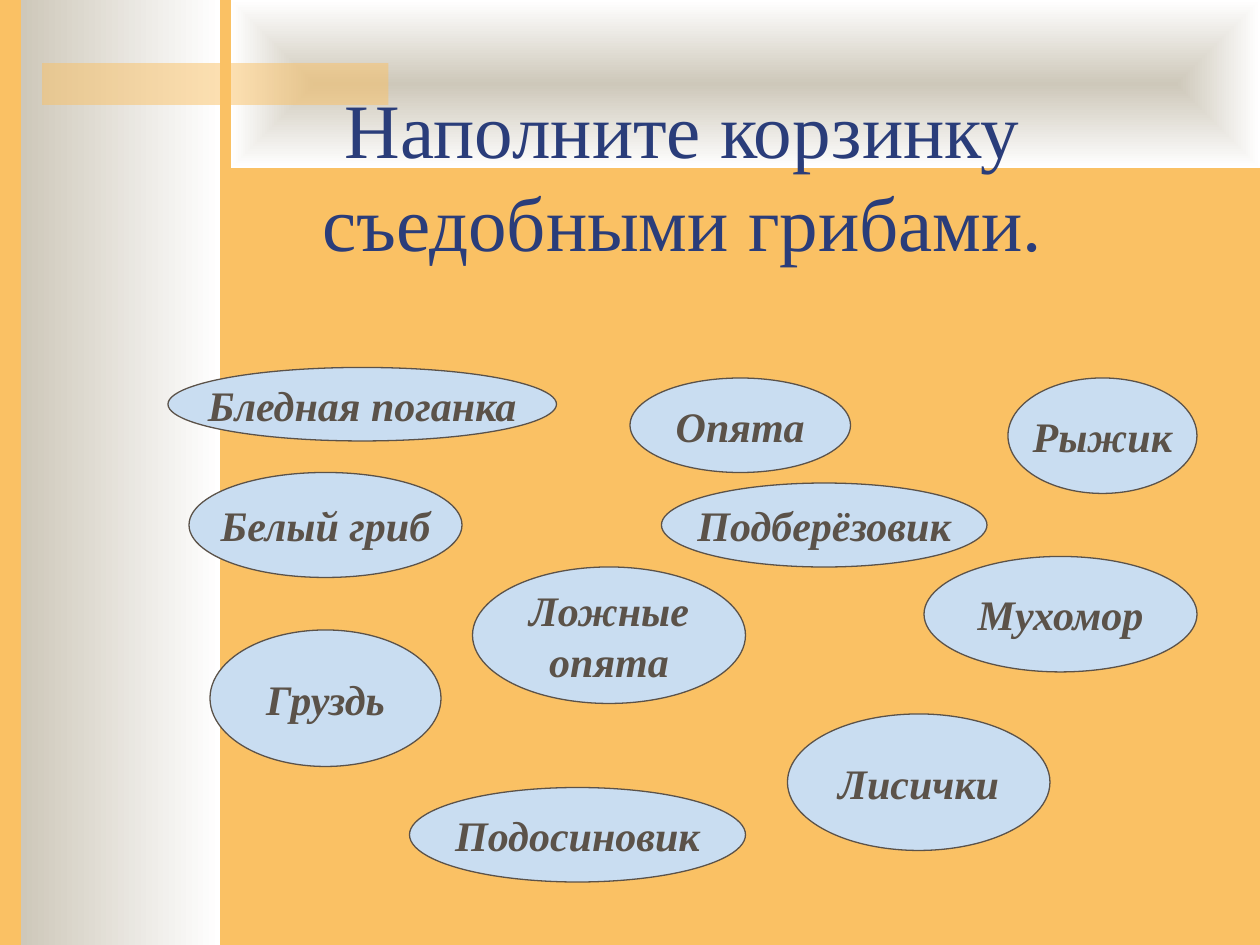
"""Build a slide that asks to pick the edible mushrooms."""
from pptx import Presentation
from pptx.dml.color import RGBColor
from pptx.enum.shapes import MSO_SHAPE
from pptx.enum.text import MSO_ANCHOR, MSO_AUTO_SIZE, PP_ALIGN
from pptx.oxml import parse_xml
from pptx.oxml.ns import nsdecls, qn
from pptx.util import Inches, Pt

ORANGE, STONE, WHITE = "FAC164", "CEC8BA", "FFFFFF"
NAVY, SKY, BROWN = "2A3D7A", "C9DDF1", "5B5249"
COLS, ROWS = 120, 90
TITLE = {"name": "Times New Roman", "size": Pt(44)}
LABEL = {"name": "Times New Roman", "size": Pt(24), "bold": True, "italic": True}
MUSHROOMS = [
    ("Бледная поганка", 16, 35, 37, 7),
    ("Опята", 60, 36, 21, 9),
    ("Белый гриб", 18, 45, 26, 10),
    ("Рыжик", 96, 36, 18, 11),
    ("Груздь", 20, 60, 22, 13),
    ("Ложные\nопята", 45, 54, 26, 13),
    ("Мухомор", 88, 53, 26, 11),
    ("Лисички", 75, 68, 25, 13),
    ("Подосиновик", 39, 75, 32, 9),
    ("Подберёзовик", 63, 46, 31, 8),
]


def rgb(value):
    return RGBColor.from_string(value)


class Deck:
    def __init__(self):
        self.prs = Presentation()
        self.prs.slide_width, self.prs.slide_height = Inches(10), Inches(7.5)
        self.s = self.prs.slides.add_slide(self.prs.slide_layouts[5])

    def box(self, col, row, cols, rows):
        x, y = self.prs.slide_width / COLS, self.prs.slide_height / ROWS
        return [round(v) for v in (col * x, row * y, cols * x, rows * y)]

    def background(self, color):
        fill = self.s.background.fill
        fill.solid()
        fill.fore_color.rgb = rgb(color)

    def shape(self, kind, *cells):
        sp = self.s.shapes.add_shape(kind, *self.box(*cells))
        sp.shadow.inherit = False
        sp.line.fill.background()
        return sp

    def gradient(self, *cells, centered=False):
        sp = self.shape(MSO_SHAPE.RECTANGLE, *cells)
        sp.fill.gradient()
        sp.fill.gradient_angle = 0
        for stop, color in zip(sp.fill.gradient_stops, (STONE, WHITE)):
            stop.color.rgb = rgb(color)
        if centered:
            lin = sp.element.spPr.find(qn("a:gradFill")).find(qn("a:lin"))
            lin.getparent().replace(lin, parse_xml(
                f'<a:path {nsdecls("a")} path="shape"><a:fillToRect '
                'l="50000" t="50000" r="50000" b="50000"/></a:path>'))

    def veil(self, color, opacity, *cells):
        sp = self.shape(MSO_SHAPE.RECTANGLE, *cells)
        sp.fill.solid()
        sp.fill.fore_color.rgb = rgb(color)
        clr = next(sp.element.spPr.iter(qn("a:srgbClr")))
        clr.append(parse_xml(f'<a:alpha {nsdecls("a")} val="{opacity * 1000}"/>'))

    def set_text(self, sp, text, style, color, anchor, wrap):
        tf = sp.text_frame
        tf.text = text
        tf.auto_size = MSO_AUTO_SIZE.NONE
        tf.vertical_anchor, tf.word_wrap = anchor, wrap
        for p in tf.paragraphs:
            p.alignment = PP_ALIGN.CENTER
            for r in p.runs:
                for key, value in style.items():
                    setattr(r.font, key, value)
                r.font.color.rgb = rgb(color)

    def title(self, text, *cells):
        sp = self.s.shapes.title
        self.s.shapes.element.append(sp.element)
        sp.left, sp.top, sp.width, sp.height = self.box(*cells)
        self.set_text(sp, text, TITLE, NAVY, MSO_ANCHOR.BOTTOM, True)

    def bubble(self, text, *cells):
        sp = self.shape(MSO_SHAPE.OVAL, *cells)
        sp.fill.solid()
        sp.fill.fore_color.rgb = rgb(SKY)
        sp.line.color.rgb = rgb(BROWN)
        sp.line.width = Pt(0.75)
        self.set_text(sp, text, LABEL, BROWN, MSO_ANCHOR.MIDDLE, False)


def main():
    deck = Deck()
    deck.background(ORANGE)
    deck.gradient(2, 0, 19, ROWS)
    deck.gradient(22, 0, 98, 16, centered=True)
    deck.veil(ORANGE, 50, 4, 6, 33, 4)
    deck.title("Наполните корзинку съедобными грибами.", 14, 11, 102, 15)
    for mushroom in MUSHROOMS:
        deck.bubble(*mushroom)
    deck.prs.save("out.pptx")


if __name__ == "__main__":
    main()
